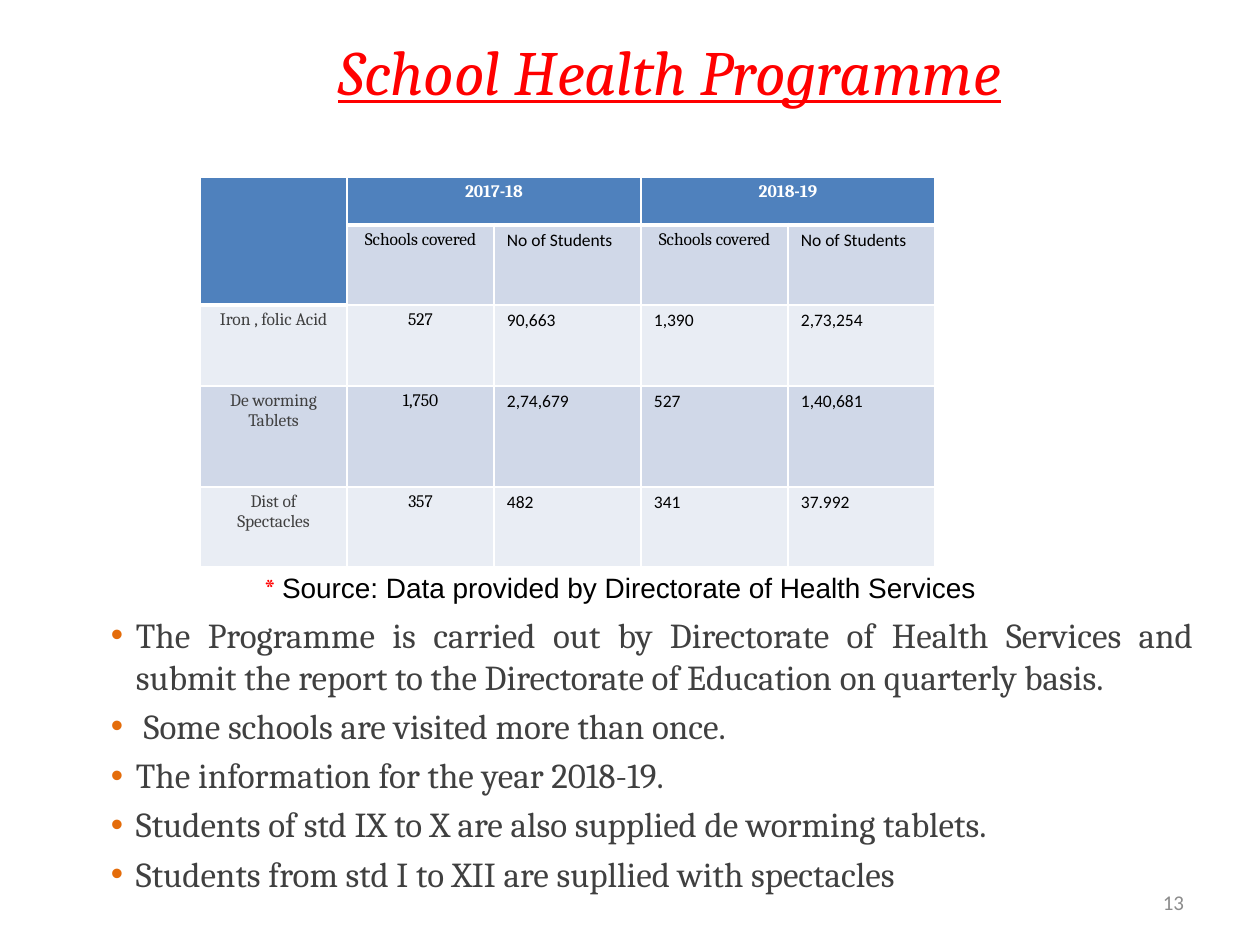
from dataclasses import dataclass

from lxml import etree
from pptx import Presentation
from pptx.dml.color import RGBColor
from pptx.enum.text import MSO_ANCHOR, PP_ALIGN
from pptx.oxml.ns import qn
from pptx.util import Emu, Pt

CENTER, LEFT, RIGHT, JUSTIFY = PP_ALIGN.CENTER, PP_ALIGN.LEFT, PP_ALIGN.RIGHT, PP_ALIGN.JUSTIFY
MIDDLE, TOP = MSO_ANCHOR.MIDDLE, MSO_ANCHOR.TOP
EMU_PER_PX = 914400 / 126


@dataclass(frozen=True)
class Theme:
    """Colours, fonts and type sizes of the deck."""
    red: str = "FF0000"
    black: str = "000000"
    white: str = "FFFFFF"
    body: str = "404040"
    muted: str = "8C8C8C"
    bullet: str = "E46C0A"
    header: str = "4F81BD"
    bands: tuple = ("E9EDF4", "D0D8E8")
    serif: str = "Cambria"
    sans: str = "Calibri"
    note: str = "Arial"
    title_size: int = 36
    body_size: int = 20
    note_size: int = 16
    number_size: int = 12
    cell_size: int = 10


THEME = Theme()

COVERAGE = [
    ["", "2017-18", "", "2018-19", ""],
    ["", "Schools covered", "No of Students", "Schools covered", "No of Students"],
    ["Iron , folic Acid", "527", "90,663", "1,390", "2,73,254"],
    ["De worming Tablets", "1,750", "2,74,679", "527", "1,40,681"],
    ["Dist of Spectacles", "357", "482", "341", "37.992"],
]
ROW_HEIGHTS = [48, 80, 81, 101, 80]
REMARKS = [
    "The Programme is carried out by Directorate of Health Services and submit "
    "the report to the Directorate of Education on quarterly basis.",
    " Some schools are visited more than once.",
    "The information for the year 2018-19.",
    "Students of std IX to X are also supplied de worming tablets.",
    "Students from std I to XII are supllied with spectacles",
]


def px(length):
    """Turn pixels into EMU."""
    return Emu(round(length * EMU_PER_PX))


def style(font, name, size, color, bold=False):
    """Format a font."""
    font.name, font.size, font.bold = name, Pt(size), bold
    font.color.rgb = RGBColor.from_string(color)


def add_text_frame(page, box, anchor=TOP):
    """Add a wrapping text box without insets and return its frame."""
    frame = page.shapes.add_textbox(*map(px, box)).text_frame
    frame.word_wrap = True
    frame.vertical_anchor = anchor
    frame.margin_left = frame.margin_right = frame.margin_top = frame.margin_bottom = 0
    return frame


def add_title(page, box, text):
    """Place and format the title placeholder."""
    title = page.shapes.title
    title.left, title.top, title.width, title.height = map(px, box)
    frame = title.text_frame
    frame.text = text
    frame.vertical_anchor = MIDDLE
    para = frame.paragraphs[0]
    para.alignment = CENTER
    style(para.font, THEME.serif, THEME.title_size, THEME.red)
    para.font.italic = para.font.underline = True


def set_borders(cell, top, bottom):
    """Draw white cell borders with the given top and bottom widths in points."""
    properties = cell._tc.get_or_add_tcPr()
    for side, width in (("L", 1), ("R", 1), ("T", top), ("B", bottom)):
        line = etree.SubElement(properties, qn(f"a:ln{side}"), w=str(Pt(width)))
        fill = etree.SubElement(line, qn("a:solidFill"))
        etree.SubElement(fill, qn("a:srgbClr"), val=THEME.white)


def is_header(row, column):
    """Tell whether a cell belongs to the header area."""
    return row == 0 or (row == 1 and column == 0)


def format_cell(cell, row, column, text):
    """Fill, border and letter one table cell."""
    header = is_header(row, column)
    below_header = row > 0 and not header and is_header(row - 1, column)
    set_borders(cell, 3 if below_header else 1, 3 if header else 1)
    cell.fill.solid()
    cell.fill.fore_color.rgb = RGBColor.from_string(THEME.header if header else THEME.bands[row % 2])
    cell.margin_left = cell.margin_right = px(13)
    cell.margin_top = cell.margin_bottom = px(5)
    cell.text = text
    centered = header or column < 2 or text == "Schools covered"
    color = THEME.white if header else THEME.body if column == 0 else THEME.black
    para = cell.text_frame.paragraphs[0]
    para.alignment = CENTER if centered else LEFT
    style(para.font, THEME.serif if centered else THEME.sans, THEME.cell_size, color, header)


def add_coverage_table(page, box):
    """Add the table of schools and students by year."""
    columns = len(COVERAGE[0])
    table = page.shapes.add_table(len(COVERAGE), columns, *map(px, box)).table
    table.first_row = table.horz_banding = False
    for column in table.columns:
        column.width = px(box[2] // columns)
    for row, height in zip(table.rows, ROW_HEIGHTS):
        row.height = px(height)
    for row, values in enumerate(COVERAGE):
        for column, text in enumerate(values):
            format_cell(table.cell(row, column), row, column, text)
    for start, end in (((0, 0), (1, 0)), ((0, 1), (0, 2)), ((0, 3), (0, 4))):
        table.cell(*start).merge(table.cell(*end))


def add_source_note(page, box):
    """Add the source line with its red asterisk."""
    para = add_text_frame(page, box).paragraphs[0]
    for text, name, color in (
        ("* ", THEME.serif, THEME.red),
        ("Source: Data provided by Directorate of Health Services", THEME.note, THEME.black),
    ):
        span = para.add_run()
        span.text = text
        style(span.font, name, THEME.note_size, color)


def add_bullet(para, indent):
    """Give a paragraph a coloured bullet with a hanging indent."""
    properties = para._p.get_or_add_pPr()
    properties.set("marL", str(px(indent)))
    properties.set("indent", str(-px(indent)))
    color = etree.SubElement(properties, qn("a:buClr"))
    etree.SubElement(color, qn("a:srgbClr"), val=THEME.bullet)
    etree.SubElement(properties, qn("a:buFont"), typeface=THEME.note)
    etree.SubElement(properties, qn("a:buChar"), char="•")


def add_remarks(page, box):
    """Add the bulleted remarks."""
    frame = add_text_frame(page, box)
    for index, text in enumerate(REMARKS):
        para = frame.add_paragraph() if index else frame.paragraphs[0]
        para.text = text
        para.alignment = JUSTIFY
        add_bullet(para, 25)
        if index:
            para.space_before = Pt(4)
        style(para.font, THEME.serif, THEME.body_size, THEME.body)


def add_page_number(page, box, number):
    """Add the page number at the right of its box."""
    para = add_text_frame(page, box, MIDDLE).paragraphs[0]
    para.text = number
    para.alignment = RIGHT
    style(para.font, THEME.sans, THEME.number_size, THEME.muted)


def main():
    """Build and save the deck."""
    deck = Presentation()
    deck.slide_width, deck.slide_height = px(1260), px(945)
    page = deck.slides.add_slide(deck.slide_layouts[5])
    add_title(page, (221, 15, 897, 110), "School Health Programme")
    add_coverage_table(page, (200, 177, 735, sum(ROW_HEIGHTS)))
    add_source_note(page, (264, 571, 780, 34))
    add_remarks(page, (111, 614, 1083, 280))
    add_page_number(page, (903, 877, 281, 50), "13")
    deck.save("out.pptx")


if __name__ == "__main__":
    main()
